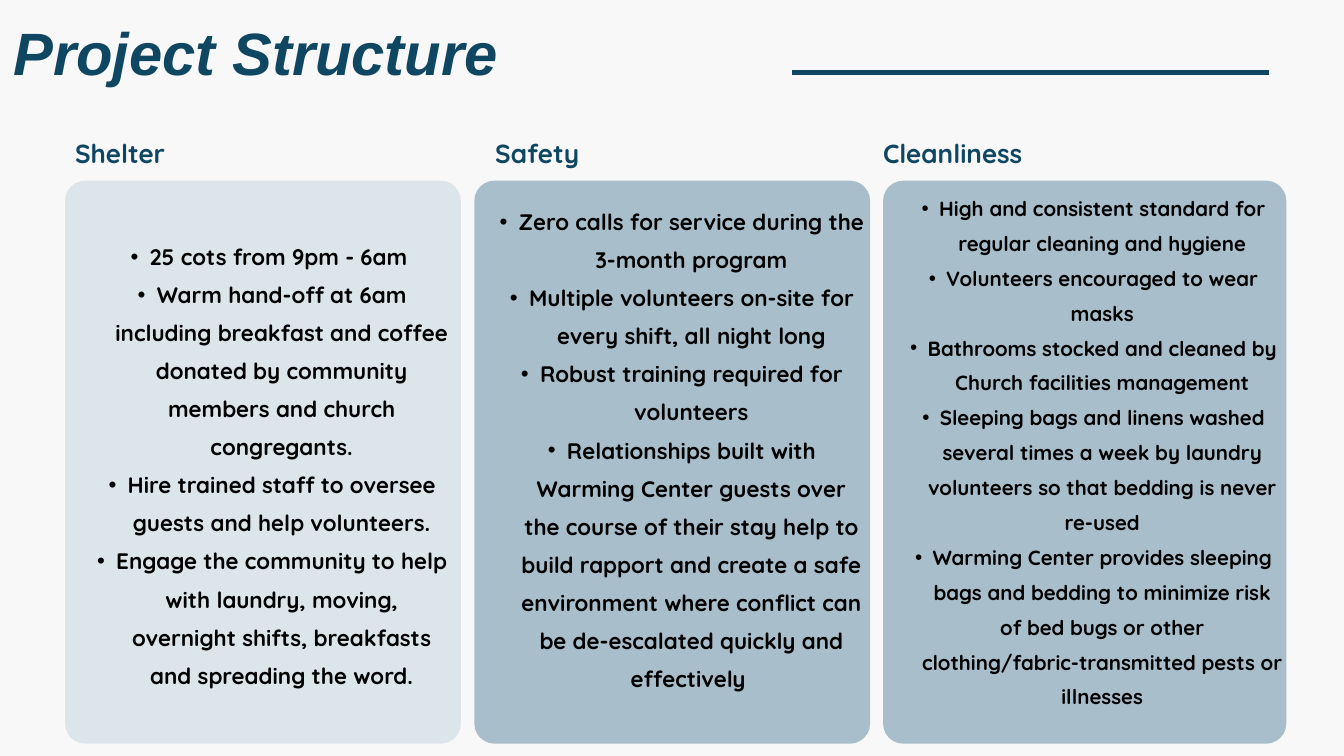
from lxml.etree import SubElement
from pptx import Presentation
from pptx.dml.color import RGBColor
from pptx.enum.shapes import MSO_CONNECTOR, MSO_SHAPE
from pptx.enum.text import MSO_ANCHOR, MSO_AUTO_SIZE, PP_ALIGN
from pptx.oxml.ns import qn
from pptx.util import Cm, Pt

NAVY, BLACK = "0F4662", "000000"
PALE, BLUE = "DBE5EA", "A9BECB"
CARD_TOP, CARD_HEIGHT, CORNER = 6.83, 21.28, 0.76

# Boxes are left, top, width, height in cm; list boxes are relative to the card
COLUMNS = [
    dict(heading="Shelter", card=(2.46, CARD_TOP, 14.96, CARD_HEIGHT), fill=PALE,
         shift=0.38, list_box=(0.38, 1.93, 14.17, 17.27), inset=0,
         size=24, leading=40.8, indent=1.44, items=[
             "25 cots from 9pm - 6am ",
             "Warm hand-off at 6am including breakfast and coffee donated by "
             "community members and church congregants.",
             "Hire trained staff to oversee guests and help volunteers.",
             "Engage the community to help with laundry, moving, overnight "
             "shifts, breakfasts and spreading the word."]),
    dict(heading="Safety", card=(17.93, CARD_TOP, 14.96, CARD_HEIGHT), fill=BLUE,
         shift=0.79, list_box=(0, -1.32, 14.96, 22.58), inset=0.15,
         size=24, leading=40.8, indent=1.44, items=[
             "Zero calls for service during the 3-month program",
             "Multiple volunteers on-site for every shift, all night long",
             "Robust training required for volunteers",
             "Relationships built with Warming Center guests over the course of "
             "their stay help to build rapport and create a safe environment "
             "where conflict can be de-escalated quickly and effectively "]),
    dict(heading="Cleanliness", card=(33.38, CARD_TOP, 15.24, CARD_HEIGHT), fill=BLUE,
         shift=0, list_box=(0, -1.11, 15.24, 22.38), inset=0.15,
         size=22, leading=37.4, indent=1.32, items=[
             "High and consistent standard for regular cleaning and hygiene",
             "Volunteers encouraged to wear masks",
             "Bathrooms stocked and cleaned by Church facilities management",
             "Sleeping bags and linens washed several times a week by laundry "
             "volunteers so that bedding is never re-used",
             "Warming Center provides sleeping bags and bedding to minimize risk "
             "of bed bugs or other clothing/fabric-transmitted pests or illnesses"]),
]


def color(hex_string):
    return RGBColor.from_string(hex_string)


def place(shape, left, top, width, height):
    shape.left, shape.top = Cm(left), Cm(top)
    shape.width, shape.height = Cm(width), Cm(height)


def prepare_frame(shape, anchor, inset=0):
    frame = shape.text_frame
    frame.word_wrap = True
    frame.auto_size = MSO_AUTO_SIZE.NONE
    frame.vertical_anchor = anchor
    frame.margin_left = frame.margin_right = Cm(inset)
    frame.margin_top = frame.margin_bottom = Cm(inset)
    return frame


def write(para, text, size, leading, hex_string, font="Quicksand",
          align=PP_ALIGN.LEFT, italic=False):
    para.alignment = align
    para.line_spacing = Pt(leading)
    para.space_before = para.space_after = Pt(0)
    span = para.add_run()
    span.text = text
    span.font.name = font
    span.font.size = Pt(size)
    span.font.bold = True
    span.font.italic = italic
    span.font.color.rgb = color(hex_string)


def add_bullet(para, indent):
    properties = para._p.get_or_add_pPr()
    properties.set("marL", str(Cm(indent)))
    properties.set("indent", str(-Cm(indent / 2)))
    SubElement(properties, qn("a:buChar")).set("char", "•")


def add_header(slide, left, top, width, height):
    # Title
    title = slide.shapes.title
    place(title, left, top, width, height)
    frame = prepare_frame(title, MSO_ANCHOR.TOP)
    write(frame.paragraphs[0], "Project Structure", 64, 89.6, NAVY, "Arial", italic=True)

    # Rule to the right of the title
    line_y = Cm(top + 2.59)
    rule = slide.shapes.add_connector(MSO_CONNECTOR.STRAIGHT, Cm(left + 29.41), line_y,
                                      Cm(left + 47.45), line_y)
    rule.line.color.rgb = color(NAVY)
    rule.line.width = Pt(6)
    SubElement(rule._element.spPr, qn("a:effectLst"))


def add_column(slide, body, column):
    left, top, width, height = column["card"]

    # Rounded card, behind the list
    card = slide.shapes.add_shape(MSO_SHAPE.ROUNDED_RECTANGLE, 0, 0, 0, 0)
    place(card, left, top, width, height)
    card.adjustments[0] = CORNER / width
    card.fill.solid()
    card.fill.fore_color.rgb = color(column["fill"])
    card.line.fill.background()
    card.shadow.inherit = False
    body._element.addprevious(card._element)

    # Heading above the card
    heading = slide.shapes.add_textbox(0, 0, 0, 0)
    place(heading, left + column["shift"], top - 1.85, 14.17, 1.37)
    frame = prepare_frame(heading, MSO_ANCHOR.TOP)
    write(frame.paragraphs[0], column["heading"], 28, 39.2, NAVY)

    # Bulleted list
    dx, dy, list_width, list_height = column["list_box"]
    place(body, left + dx, top + dy, list_width, list_height)
    frame = prepare_frame(body, MSO_ANCHOR.MIDDLE, column["inset"])
    for number, item in enumerate(column["items"]):
        para = frame.add_paragraph() if number else frame.paragraphs[0]
        add_bullet(para, column["indent"])
        write(para, item, column["size"], column["leading"], BLACK, align=PP_ALIGN.CENTER)


def main():
    deck = Presentation()
    deck.slide_width, deck.slide_height = Cm(50.8), Cm(28.575)
    comparison_layout = deck.slide_layouts[4]
    slide = deck.slides.add_slide(comparison_layout)
    slide.background.fill.solid()
    slide.background.fill.fore_color.rgb = color("F8F8F8")

    add_header(slide, 0.51, 0.15, 22.56, 3.33)
    _, *bodies = slide.placeholders
    for body, column in zip(bodies, COLUMNS):
        add_column(slide, body, column)

    # The layout has one body more than there are columns
    for spare in bodies[len(COLUMNS):]:
        spare._element.getparent().remove(spare._element)
    deck.save("out.pptx")


if __name__ == "__main__":
    main()
